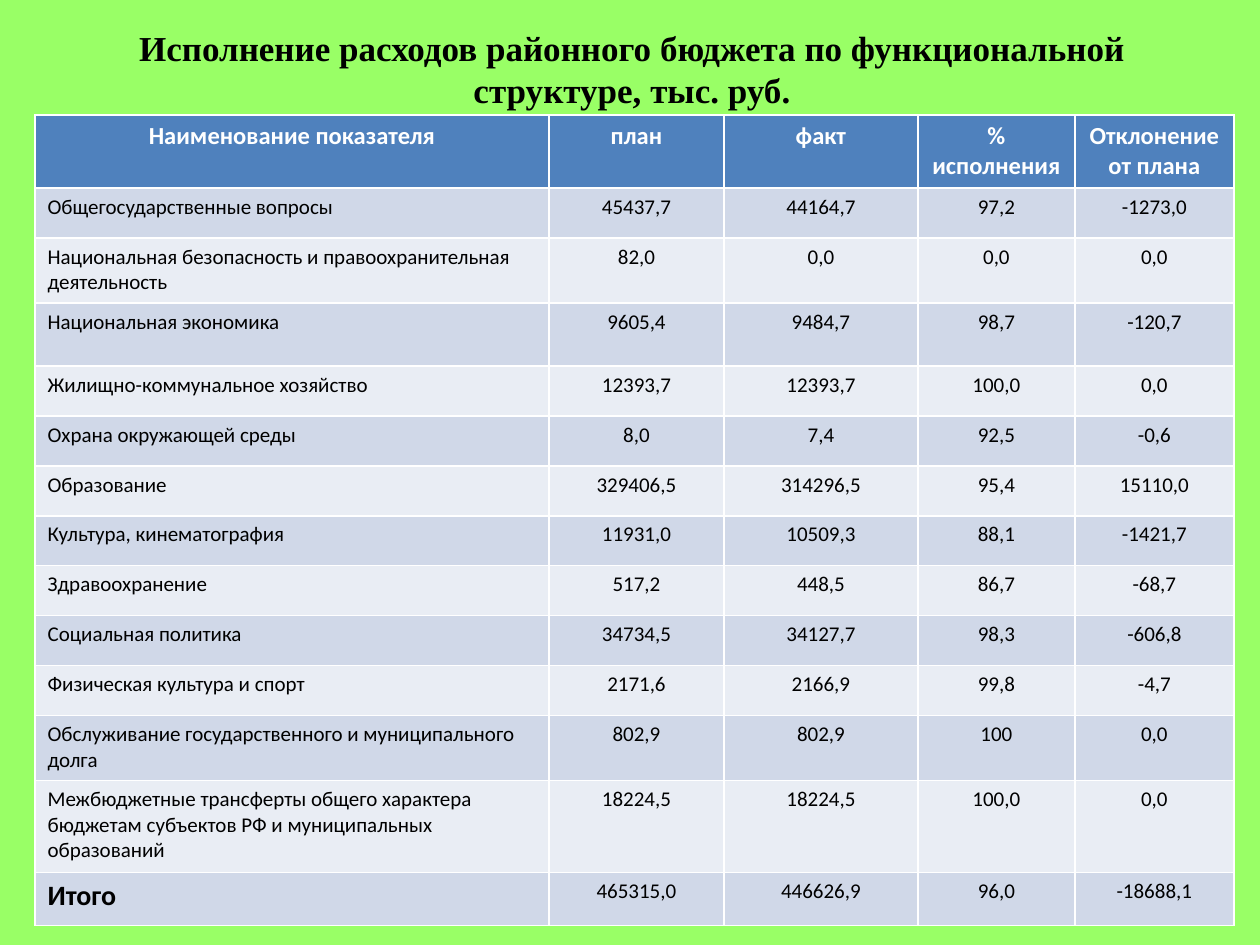
import pptx
import pptx.util
import pptx.dml.color
import pptx.enum.text

RGBColor = pptx.dml.color.RGBColor
PP_ALIGN = pptx.enum.text.PP_ALIGN

TITLE = "Исполнение расходов районного бюджета по функциональной структуре, тыс. руб."
HEADER = ("Наименование показателя", "план", "факт", "% исполнения", "Отклонение от плана")
# Row height in px, then the cells
BUDGET = [
    (50, "Общегосударственные вопросы", "45437,7", "44164,7", "97,2", "-1273,0"),
    (65, "Национальная безопасность и правоохранительная деятельность",
     "82,0", "0,0", "0,0", "0,0"),
    (63, "Национальная экономика", "9605,4", "9484,7", "98,7", "-120,7"),
    (50, "Жилищно-коммунальное хозяйство", "12393,7", "12393,7", "100,0", "0,0"),
    (50, "Охрана окружающей среды", "8,0", "7,4", "92,5", "-0,6"),
    (50, "Образование", "329406,5", "314296,5", "95,4", "15110,0"),
    (50, "Культура, кинематография", "11931,0", "10509,3", "88,1", "-1421,7"),
    (50, "Здравоохранение", "517,2", "448,5", "86,7", "-68,7"),
    (50, "Социальная политика", "34734,5", "34127,7", "98,3", "-606,8"),
    (50, "Физическая культура и спорт", "2171,6", "2166,9", "99,8", "-4,7"),
    (65, "Обслуживание государственного и муниципального долга",
     "802,9", "802,9", "100", "0,0"),
    (92, "Межбюджетные трансферты общего характера бюджетам субъектов РФ "
         "и муниципальных образований", "18224,5", "18224,5", "100,0", "0,0"),
    (53, "Итого", "465315,0", "446626,9", "96,0", "-18688,1"),
]
COLUMN_WIDTHS = (514, 175, 194, 157, 159)
HEADER_HEIGHT = 73

GREEN = RGBColor(0x99, 0xFF, 0x66)
BLUE = RGBColor(0x4F, 0x81, 0xBD)
BANDS = (RGBColor(0xE9, 0xED, 0xF4), RGBColor(0xD0, 0xD8, 0xE8))
WHITE = RGBColor(0xFF, 0xFF, 0xFF)
BLACK = RGBColor(0, 0, 0)


def px(length):
    return pptx.util.Emu(length * 914400 // 126)


def style(paragraph, font_name, size, color, bold, align):
    paragraph.alignment = align
    font = paragraph.font
    font.name, font.size, font.bold = font_name, pptx.util.Pt(size), bold
    font.color.rgb = color


def add_title(slide):
    title = slide.shapes.title
    title.left, title.top, title.width, title.height = map(px, (41, 20, 1182, 97))
    frame = title.text_frame
    frame.text = TITLE
    frame.word_wrap = True
    frame.auto_size = pptx.enum.text.MSO_AUTO_SIZE.SHAPE_TO_FIT_TEXT
    frame.vertical_anchor = pptx.enum.text.MSO_ANCHOR.TOP
    style(frame.paragraphs[0], "Times New Roman", 20, BLACK, True, PP_ALIGN.CENTER)


def add_budget(slide):
    rows = [(HEADER_HEIGHT, *HEADER), *BUDGET]
    table = slide.shapes.add_table(
        len(rows), len(HEADER), px(35), px(115),
        px(sum(COLUMN_WIDTHS)), px(sum(row[0] for row in rows))).table
    for column, width in zip(table.columns, COLUMN_WIDTHS):
        column.width = px(width)
    for r, (height, *texts) in enumerate(rows):
        table.rows[r].height = px(height)
        is_header = r == 0
        for c, text in enumerate(texts):
            cell = table.cell(r, c)
            cell.text = text
            cell.fill.solid()
            cell.fill.fore_color.rgb = BLUE if is_header else BANDS[r % 2]
            is_total_label = r == len(rows) - 1 and c == 0
            style(cell.text_frame.paragraphs[0], "Calibri",
                  14 if is_header else 16 if is_total_label else 12,
                  WHITE if is_header else BLACK,
                  is_header or is_total_label,
                  PP_ALIGN.CENTER if is_header or c else PP_ALIGN.LEFT)


def main():
    presentation = pptx.Presentation()
    presentation.slide_width, presentation.slide_height = px(1260), px(945)
    title_only = presentation.slide_layouts[5]
    slide = presentation.slides.add_slide(title_only)
    slide.background.fill.solid()
    slide.background.fill.fore_color.rgb = GREEN
    add_title(slide)
    add_budget(slide)
    presentation.save("out.pptx")


if __name__ == "__main__":
    main()
